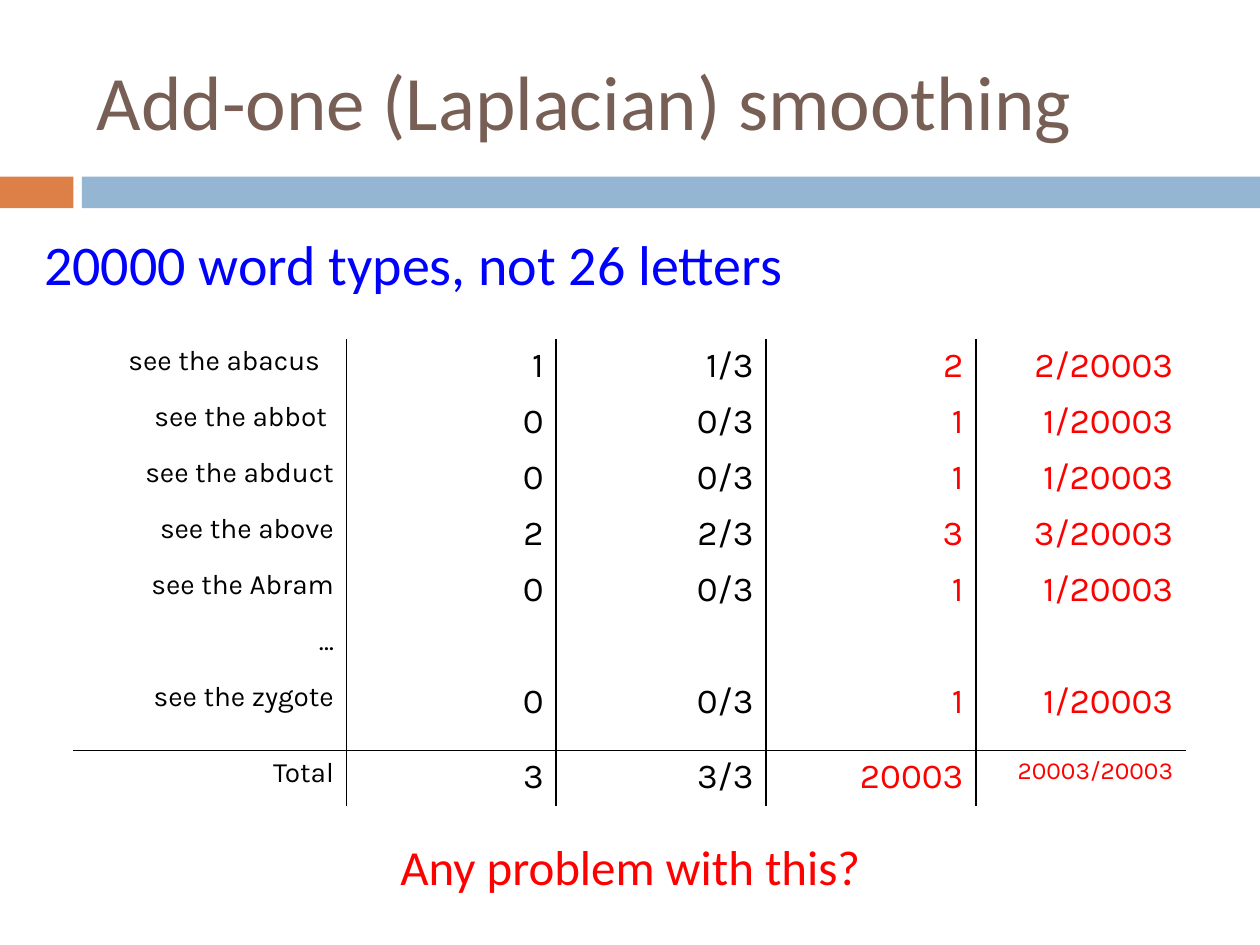
import pptx
import pptx.util
import pptx.dml.color
import pptx.enum.shapes
import pptx.enum.text
import lxml.etree

Cm = pptx.util.Cm
Pt = pptx.util.Pt
RGBColor = pptx.dml.color.RGBColor
PP_ALIGN = pptx.enum.text.PP_ALIGN
ANCHOR = pptx.enum.text.MSO_ANCHOR

BLACK = RGBColor(0, 0, 0)
RED = RGBColor(0xFF, 0, 0)
BLUE = RGBColor(0, 0, 0xFF)
BROWN = RGBColor(0x77, 0x5F, 0x55)
ORANGE = RGBColor(0xDD, 0x80, 0x47)
PALE_BLUE = RGBColor(0x94, 0xB6, 0xD2)
NAMESPACE = "{http://schemas.openxmlformats.org/drawingml/2006/main}"


def write(text_frame, text, font_name, size, color, alignment=PP_ALIGN.LEFT):
    """Put one formatted paragraph into a text frame."""
    text_frame.text = text
    paragraph = text_frame.paragraphs[0]
    paragraph.alignment = alignment
    for font in [paragraph.font] + [run.font for run in paragraph.runs]:
        font.name = font_name
        font.size = Pt(size)
        font.color.rgb = color


def set_borders(cell, sides):
    """Draw thin black lines on the given cell sides and none on the others."""
    properties = cell._tc.get_or_add_tcPr()
    for position, side in enumerate("LRTB"):
        line = lxml.etree.Element(NAMESPACE + "ln" + side, w=str(Pt(1)))
        if side in sides:
            fill = lxml.etree.SubElement(line, NAMESPACE + "solidFill")
            lxml.etree.SubElement(fill, NAMESPACE + "srgbClr", val=str(BLACK))
        else:
            lxml.etree.SubElement(line, NAMESPACE + "noFill")
        properties.insert(position, line)


presentation = pptx.Presentation()
presentation.slide_width = Cm(25.4)
presentation.slide_height = Cm(19.05)
slide = presentation.slides.add_slide(presentation.slide_layouts[5])

# Title and the band below it
for left, width, color in [(0, 1.48, ORANGE), (1.65, 23.75, PALE_BLUE)]:
    band = slide.shapes.add_shape(
        pptx.enum.shapes.MSO_SHAPE.RECTANGLE, Cm(left), Cm(3.56), Cm(width), Cm(0.64))
    band.shadow.inherit = False
    band.fill.solid()
    band.fill.fore_color.rgb = color
    band.line.fill.background()

title = slide.shapes.title
title.left, title.top, title.width, title.height = Cm(1.7), Cm(0.64), Cm(22.66), Cm(2.74)
title.text_frame.vertical_anchor = ANCHOR.MIDDLE
write(title.text_frame, "Add-one (Laplacian) smoothing", "Calibri", 44, BROWN)

# Text above and below the table
for text, left, top, width, height, size, color in [
    ("20000 word types, not 26 letters", 0.64, 4.5, 23.7, 1.47, 32, BLUE),
    ("Any problem with this?", 7.82, 16.74, 12.27, 1.45, 28, RED),
]:
    text_box = slide.shapes.add_textbox(Cm(left), Cm(top), Cm(width), Cm(height))
    text_box.text_frame.word_wrap = True
    write(text_box.text_frame, text, "Calibri", size, color)

# Counts and estimates, before and after smoothing
rows = [
    ("see the abacus", "1", "1/3", "2", "2/20003"),
    ("see the abbot", "0", "0/3", "1", "1/20003"),
    ("see the abduct", "0", "0/3", "1", "1/20003"),
    ("see the above", "2", "2/3", "3", "3/20003"),
    ("see the Abram", "0", "0/3", "1", "1/20003"),
    ("…", "", "", "", ""),
    ("see the zygote", "0", "0/3", "1", "1/20003"),
    ("Total", "3", "3/3", "20003", "20003/20003"),
]
column_widths = [5.5] + [4.23] * 4
row_heights = [1.13] * 6 + [1.52, 1.13]
right_margins = {"see the abacus": 0.53, "see the abbot": 0.39}
total_row, last_column = len(rows) - 1, len(column_widths) - 1

table_frame = slide.shapes.add_table(
    len(rows), len(column_widths), Cm(1.48), Cm(6.83),
    Cm(sum(column_widths)), Cm(sum(row_heights)))
table = table_frame.table
table.first_row = False
table.horz_banding = False
for column, width in zip(table.columns, column_widths):
    column.width = Cm(width)
for row, height in zip(table.rows, row_heights):
    row.height = Cm(height)

for row_index, values in enumerate(rows):
    for column_index, text in enumerate(values):
        cell = table.cell(row_index, column_index)
        cell.fill.background()
        cell.margin_right = Cm(right_margins.get(text, 0.25))
        if column_index == 0:
            size = 16
        elif text == "20003/20003":
            size = 14
        else:
            size = 20
        color = RED if column_index >= 3 else BLACK
        write(cell.text_frame, text, "Karla", size, color, PP_ALIGN.RIGHT)

        sides = ""
        if column_index > 0:
            sides += "L"
        if column_index < last_column:
            sides += "R"
        if row_index == total_row:
            sides += "T"
        if row_index == total_row - 1:
            sides += "B"
        set_borders(cell, sides)

presentation.save("out.pptx")
